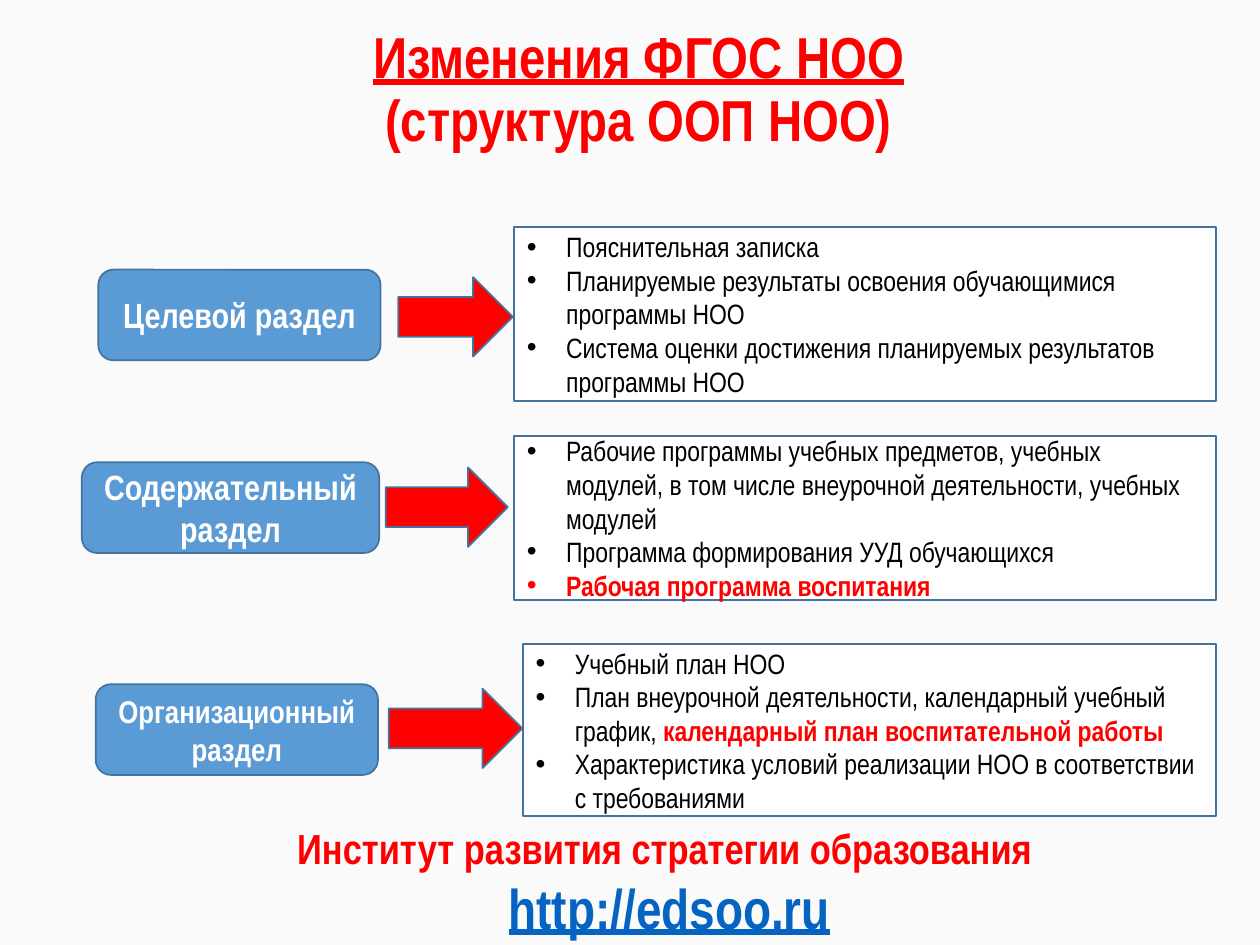
"""Build a slide on the three sections of a school programme."""
import pptx
import pptx.dml.color
import pptx.enum.shapes
import pptx.enum.text
import pptx.oxml.ns
import pptx.util
from lxml import etree

Pt = pptx.util.Pt
Kind = pptx.enum.shapes.MSO_SHAPE
Align = pptx.enum.text.PP_ALIGN
Anchor = pptx.enum.text.MSO_ANCHOR
Fit = pptx.enum.text.MSO_AUTO_SIZE

FACE = "Arial Narrow"
RED, BLUE, EDGE = "FF0000", "5B9BD5", "43739E"
WHITE, BLACK, LINK = "FFFFFF", "000000", "0563C1"

ROWS = [
    {"label": "Целевой раздел", "size": 20,
     "box": (56.2, 154.1, 161.3, 51.8),
     "arrow": (237.6, 148.3, 45.4, 65.5),
     "panel": (293.8, 129.6, 401, 99.4),
     "items": [[("Пояснительная записка", False)],
               [("Планируемые результаты освоения обучающимися программы НОО", False)],
               [("Система оценки достижения планируемых результатов программы НОО", False)]]},
    {"label": "Содержательный раздел", "size": 20,
     "box": (46.8, 264.2, 169.9, 51.8),
     "arrow": (232.6, 254.9, 45.4, 69.8),
     "panel": (293.8, 249.1, 401, 93.6),
     "items": [[("Рабочие программы учебных предметов, учебных модулей, "
                 "в том числе внеурочной деятельности, учебных модулей", False)],
               [("Программа формирования УУД обучающихся", False)],
               [("Рабочая программа воспитания", True)]]},
    {"label": "Организационный раздел", "size": 18,
     "box": (54.7, 391, 161.3, 51.8),
     "arrow": (237.6, 378, 45.4, 76.3),
     "panel": (298.8, 367.9, 396, 98.6),
     "items": [[("Учебный план НОО", False)],
               [("План внеурочной деятельности, календарный учебный график, ", False),
                ("календарный план воспитательной работы", True)],
               [("Характеристика условий реализации НОО в соответствии "
                 "с требованиями", False)]]},
]


def tint(code):
    """Return the colour for a hex string."""
    return pptx.dml.color.RGBColor.from_string(code)


def place(shape, area):
    """Move and size a shape, in points."""
    shape.left, shape.top, shape.width, shape.height = map(Pt, area)


def paint(shape, fill):
    """Fill a shape and give it the shared thin edge."""
    shape.fill.solid()
    shape.fill.fore_color.rgb = tint(fill)
    shape.line.color.rgb = tint(EDGE)
    shape.line.width = Pt(1)


def frame(shape, anchor, fit=Fit.NONE):
    """Set up and return the text frame of a shape."""
    text = shape.text_frame
    text.word_wrap = True
    text.auto_size = fit
    text.vertical_anchor = anchor
    return text


def line(text, first, align=Align.CENTER):
    """Return the first or a new paragraph, without space before."""
    para = text.paragraphs[0] if first else text.add_paragraph()
    para.alignment = align
    para.space_before = Pt(0)
    return para


def write(para, words, size, color, bold=True, under=False):
    """Add one formatted run."""
    run = para.add_run()
    run.text = words
    font = run.font
    font.name, font.size = FACE, Pt(size)
    font.bold, font.underline = bold, under
    font.color.rgb = tint(color)


def bullet(para):
    """Give a paragraph a round bullet and a hanging indent."""
    props = para._p.get_or_add_pPr()
    props.set("marL", str(Pt(22.5)))
    props.set("indent", str(-Pt(22.5)))
    name = pptx.oxml.ns.qn
    etree.SubElement(props, name("a:buFont")).set("typeface", "Arial")
    etree.SubElement(props, name("a:buChar")).set("char", "•")


def title(shape):
    """Fill the title with its two lines."""
    place(shape, (54.7, 0, 620.6, 104.4))
    para = line(frame(shape, Anchor.MIDDLE), True)
    para.line_spacing = 0.9
    write(para, "Изменения ФГОС НОО", 33, RED, under=True)
    para.add_line_break()
    write(para, "(структура ООП НОО)", 33, RED)


def block(slide, kind, area, fill):
    """Add a painted preset shape."""
    shape = slide.shapes.add_shape(kind, *map(Pt, area))
    shape.shadow.inherit = False
    paint(shape, fill)
    return shape


def label(slide, row):
    """Add the rounded box that names a section."""
    shape = block(slide, Kind.ROUNDED_RECTANGLE, row["box"], BLUE)
    para = line(frame(shape, Anchor.MIDDLE), True)
    write(para, row["label"], row["size"], WHITE)


def arrow(slide, area):
    """Add an arrow turned to point right."""
    block(slide, Kind.DOWN_ARROW, area, RED).rotation = 270


def panel(shape, row):
    """Fill a body placeholder with the list of a section."""
    place(shape, row["panel"])
    paint(shape, WHITE)
    text = frame(shape, Anchor.MIDDLE)
    for spot, item in enumerate(row["items"]):
        para = line(text, spot == 0, Align.LEFT)
        bullet(para)
        for words, hot in item:
            write(para, words, 16, RED if hot else BLACK, hot)


def footer(slide):
    """Add the institute and its address."""
    area = (69.8, 466.6, 625.7, 113.8)
    shape = slide.shapes.add_textbox(*map(Pt, area))
    text = frame(shape, Anchor.TOP, Fit.SHAPE_TO_FIT_TEXT)
    write(line(text, True), "Институт развития стратегии образования ", 24, RED)
    write(line(text, False), "http://edsoo.ru", 32, LINK, under=True)


def main():
    """Build and save the slide."""
    deck = pptx.Presentation()
    deck.slide_width, deck.slide_height = Pt(720), Pt(540)
    slide = deck.slides.add_slide(deck.slide_layouts.get_by_name("Comparison"))
    slide.background.fill.solid()
    slide.background.fill.fore_color.rgb = tint("FAFAFA")
    head, *bodies = list(slide.placeholders)
    title(head)
    for shape, row in zip(bodies, ROWS):
        panel(shape, row)
        label(slide, row)
        arrow(slide, row["arrow"])
    for spare in bodies[len(ROWS):]:
        spare.element.getparent().remove(spare.element)
    footer(slide)
    deck.save("out.pptx")


if __name__ == "__main__":
    main()
